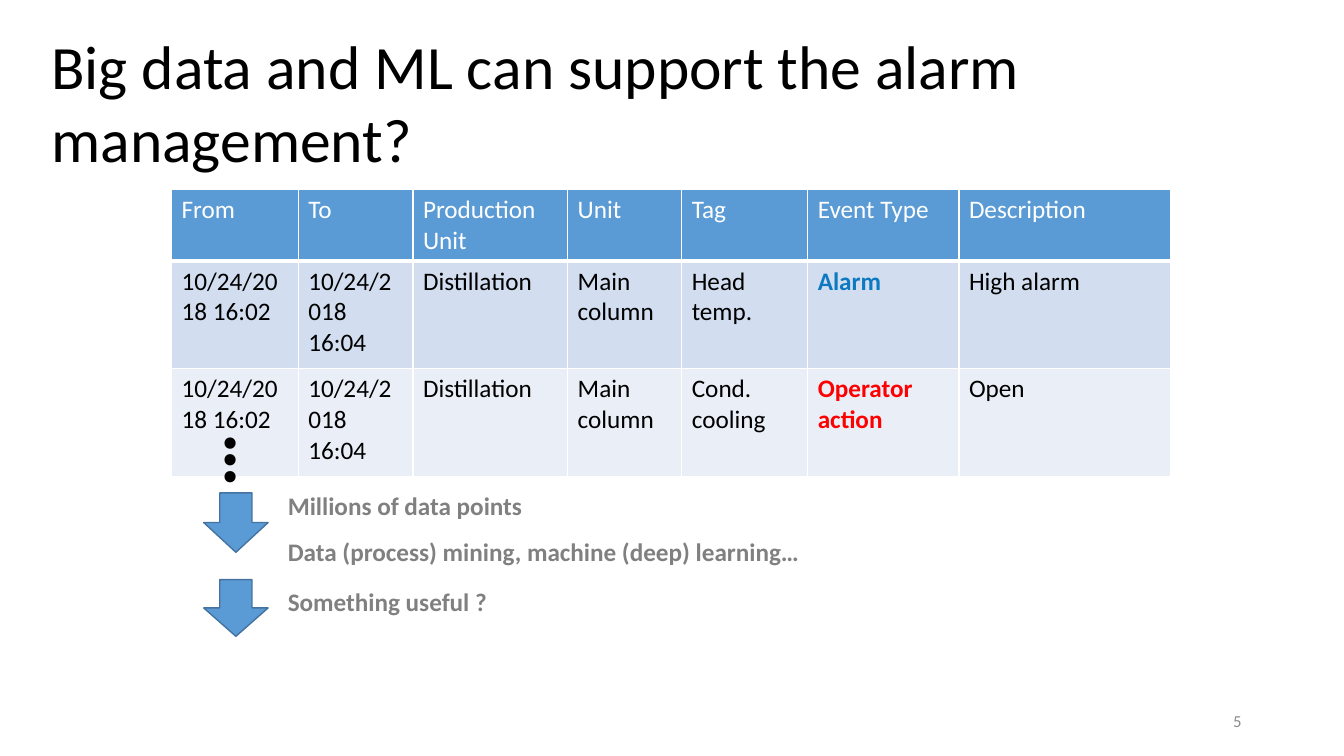
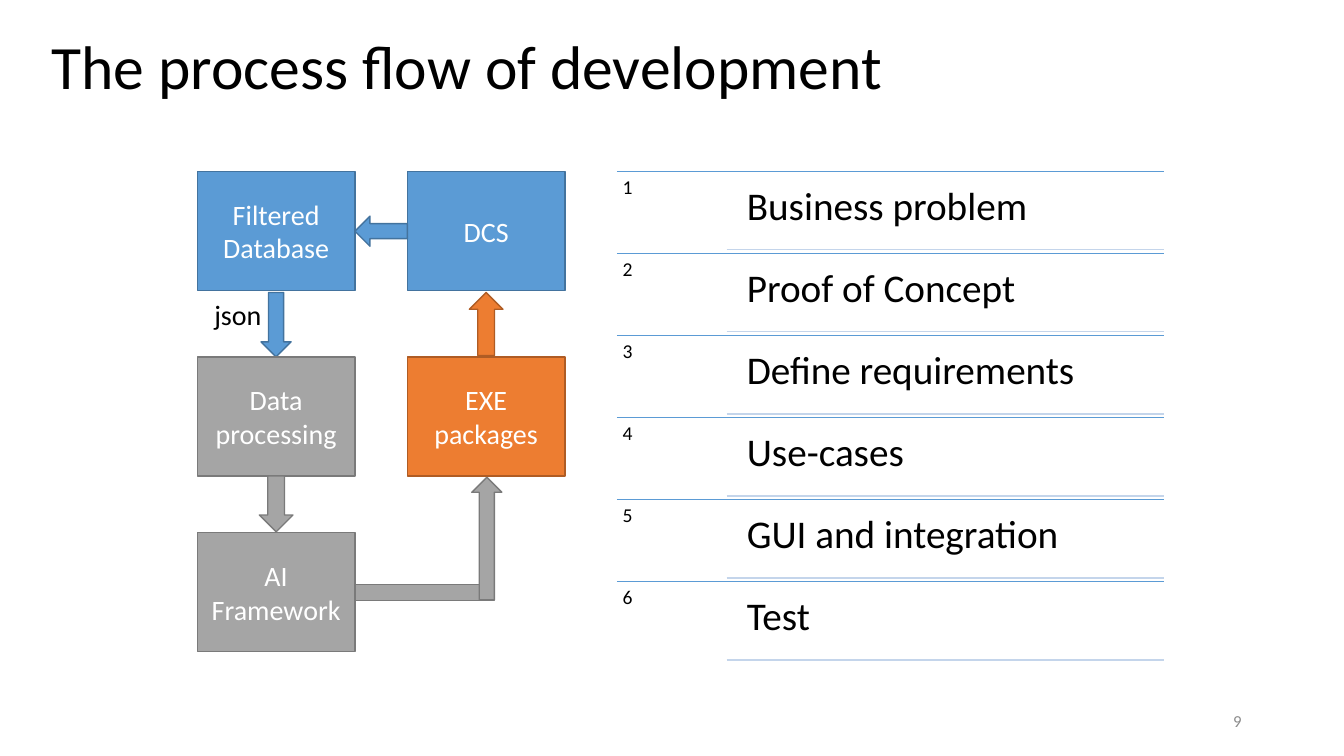
from pptx import Presentation
from pptx.dml.color import RGBColor
from pptx.enum.shapes import MSO_CONNECTOR, MSO_SHAPE
from pptx.enum.text import MSO_ANCHOR, MSO_AUTO_SIZE, PP_ALIGN
from pptx.oxml.ns import qn
from pptx.util import Pt
from lxml import etree

FONT = "Calibri"
BLACK = RGBColor(0x00, 0x00, 0x00)
WHITE = RGBColor(0xFF, 0xFF, 0xFF)
BLUE = RGBColor(0x5B, 0x9B, 0xD5)
BLUE_EDGE = RGBColor(0x43, 0x73, 0x9E)
GRAY = RGBColor(0xA5, 0xA5, 0xA5)
GRAY_EDGE = RGBColor(0x7A, 0x7A, 0x7A)
ORANGE = RGBColor(0xED, 0x7D, 0x31)
ORANGE_EDGE = RGBColor(0xAF, 0x5C, 0x24)
PALE_LINE = RGBColor(0xC4, 0xD5, 0xEB)
BAND_DARK = RGBColor(0xD2, 0xDE, 0xEF)
BAND_LIGHT = RGBColor(0xEA, 0xEF, 0xF7)
ALARM_BLUE = RGBColor(0x0D, 0x79, 0xC0)
ACTION_RED = RGBColor(0xFF, 0x00, 0x00)
NOTE_GRAY = RGBColor(0x80, 0x80, 0x80)
NUMBER_GRAY = RGBColor(0x8C, 0x8C, 0x8C)

BLUE_STYLE = (BLUE, BLUE_EDGE)
GRAY_STYLE = (GRAY, GRAY_EDGE)
ORANGE_STYLE = (ORANGE, ORANGE_EDGE)

RECT = MSO_SHAPE.RECTANGLE
DOWN = MSO_SHAPE.DOWN_ARROW
UP = MSO_SHAPE.UP_ARROW
LEFT = MSO_SHAPE.LEFT_ARROW
STRAIGHT = MSO_CONNECTOR.STRAIGHT
TOP, MIDDLE = MSO_ANCHOR.TOP, MSO_ANCHOR.MIDDLE
ALIGN_LEFT, ALIGN_CENTER, ALIGN_RIGHT = PP_ALIGN.LEFT, PP_ALIGN.CENTER, PP_ALIGN.RIGHT
NO_AUTOFIT = MSO_AUTO_SIZE.NONE
TITLE_ONLY = 5

EVENT_WIDTHS = (90.5, 82, 110.5, 81.5, 90, 108, 151.5)
EVENTS = (
    ("From", "To", "Production Unit", "Unit", "Tag", "Event Type", "Description"),
    ("10/24/2018 16:02", "10/24/2018 16:04", "Distillation", "Main column",
     "Head temp.", "Alarm", "High alarm"),
    ("10/24/2018 16:02", "10/24/2018 16:04", "Distillation", "Main column",
     "Cond. cooling", "Operator action", "Open"),
)
EVENT_COLORS = {"Alarm": ALARM_BLUE, "Operator action": ACTION_RED}
STEPS = ("Business problem", "Proof of Concept", "Define requirements",
         "Use-cases", "GUI and integration", "Test")


def write(frame, text, size, color, bold=False, align=ALIGN_LEFT):
    frame.text = text
    para = frame.paragraphs[0]
    para.alignment = align
    font = para.font
    font.name, font.size, font.bold = FONT, Pt(size), bold
    font.color.rgb = color
    return para


def add_text(page, left, top, width, height, text, size, color=BLACK,
             bold=False, align=ALIGN_LEFT, anchor=TOP, inset=None):
    box = page.shapes.add_textbox(Pt(left), Pt(top), Pt(width), Pt(height))
    frame = box.text_frame
    frame.word_wrap = True
    frame.vertical_anchor = anchor
    if inset is not None:
        frame.margin_left = frame.margin_right = Pt(inset)
        frame.margin_top = frame.margin_bottom = Pt(inset)
    write(frame, text, size, color, bold, align)
    return box


def add_block(page, kind, left, top, width, height, style):
    block = page.shapes.add_shape(kind, Pt(left), Pt(top), Pt(width), Pt(height))
    fill, edge = style
    block.shadow.inherit = False
    block.fill.solid()
    block.fill.fore_color.rgb = fill
    block.line.color.rgb = edge
    block.line.width = Pt(1)
    return block


def add_rule(page, left, right, y, color):
    rule = page.shapes.add_connector(STRAIGHT, Pt(left), Pt(y), Pt(right), Pt(y))
    rule.line.color.rgb = color
    rule.line.width = Pt(1)
    etree.SubElement(rule._element.spPr, qn("a:effectLst"))


def add_page(deck, title, number):
    """Add a slide with the shared title style and slide number."""
    page = deck.slides.add_slide(deck.slide_layouts[TITLE_ONLY])
    heading = page.shapes.title
    heading.left, heading.top = Pt(29.5), Pt(16)
    heading.width, heading.height = Pt(741), Pt(110)
    frame = heading.text_frame
    frame.auto_size = NO_AUTOFIT
    frame.vertical_anchor = TOP
    write(frame, title, 44, BLACK)
    add_text(page, 678, 500.5, 216, 28.5, number, 12, NUMBER_GRAY,
             align=ALIGN_RIGHT, anchor=MIDDLE)
    return page


def add_borders(cell, bottom):
    props = cell._tc.get_or_add_tcPr()
    for side, width in (("L", 1), ("R", 1), ("T", 1), ("B", bottom)):
        line = etree.SubElement(props, qn(f"a:ln{side}"), w=str(Pt(width)))
        fill = etree.SubElement(line, qn("a:solidFill"))
        etree.SubElement(fill, qn("a:srgbClr"), val=str(WHITE))


def add_event_table(page, left, top):
    frame = page.shapes.add_table(len(EVENTS), len(EVENT_WIDTHS), Pt(left), Pt(top),
                                  Pt(sum(EVENT_WIDTHS)), Pt(205))
    table = frame.table
    for column, width in zip(table.columns, EVENT_WIDTHS):
        column.width = Pt(width)
    for row, height in zip(table.rows, (51, 77, 77)):
        row.height = Pt(height)
    for r, (event, fill) in enumerate(zip(EVENTS, (BLUE, BAND_DARK, BAND_LIGHT))):
        base = BLACK if r else WHITE
        for c, text in enumerate(event):
            cell = table.cell(r, c)
            add_borders(cell, 1 if r else 3)
            cell.fill.solid()
            cell.fill.fore_color.rgb = fill
            write(cell.text_frame, text, 18, EVENT_COLORS.get(text, base),
                  text in EVENT_COLORS)


def add_mining_steps(page, left, top):
    dots = add_text(page, left - 2, top - 47.5, 77, 73, "…", 54, bold=True)
    dots.rotation = 90
    for offset, height in ((0, 42.5), (62, 40.5)):
        add_block(page, DOWN, left, top + offset, 46, height, BLUE_STYLE)
    notes = ((-5.5, "Millions of data points"),
             (27.5, "Data (process) mining, machine (deep) learning…"),
             (63.5, "Something useful ?"))
    for offset, text in notes:
        add_text(page, left + 53, top + offset, 640, 29, text, 18, NOTE_GRAY, True)


def add_process_flow(page, left, top):
    width, height = 112.5, 85
    right = left + 150
    row_2, row_3 = top + 132.5, top + 258
    center_1, center_2 = left + width / 2, right + width / 2

    def stage(x, y, text, style):
        block = add_block(page, RECT, x, y, width, height, style)
        block.text_frame.word_wrap = True
        block.text_frame.vertical_anchor = MIDDLE
        write(block.text_frame, text, 20, WHITE, align=ALIGN_CENTER)

    def arrow(kind, center, y, breadth, length, style):
        add_block(page, kind, center - breadth / 2, y, breadth, length, style)

    stage(right, top, "DCS", BLUE_STYLE)
    add_block(page, LEFT, left + width, top + 32, right - left - width, 21.5, BLUE_STYLE)
    stage(left, top, "Filtered Database", BLUE_STYLE)
    arrow(DOWN, center_1, top + 86.5, 21.5, 46, BLUE_STYLE)
    add_text(page, left + 5, top + 86.5, 50, 31.5, "json", 20)
    stage(left, row_2, "Data processing", GRAY_STYLE)
    stage(left, row_3, "AI\vFramework", GRAY_STYLE)
    arrow(DOWN, center_1, row_2 + height, 24, 40, GRAY_STYLE)
    stage(right, row_2, "EXE\vpackages", ORANGE_STYLE)
    arrow(UP, center_2, top + 86.5, 24, 45, ORANGE_STYLE)
    add_block(page, RECT, left + width, row_3 + 37, 99.5, 11.5, GRAY_STYLE)
    arrow(UP, center_2 + 0.5, row_2 + height + 1, 21.5, 87.5, GRAY_STYLE)


def add_step_list(page, left, top, width):
    pitch, number_width = 58.6, 78.5
    right = left + width
    text_left = left + number_width + 6
    for index, step in enumerate(STEPS):
        y = top + index * pitch
        add_rule(page, left, right, y, BLUE)
        number = add_text(page, left, y, number_width, pitch, str(index + 1), 14, inset=4.2)
        label = add_text(page, text_left, y + 2.6, right - text_left, 53.2, step, 28,
                         inset=8.4)
        for box in (number, label):
            box.text_frame.paragraphs[0].line_spacing = 0.9
        add_rule(page, left + number_width, right, y + 56, PALE_LINE)


def main():
    deck = Presentation()
    deck.slide_width, deck.slide_height = Pt(960), Pt(540)

    page = add_page(deck, "Big data and ML can support the alarm management?", "5")
    add_event_table(page, 122.5, 135.5)
    add_mining_steps(page, 145.5, 352)

    page = add_page(deck, "The process flow of development", "9")
    add_process_flow(page, 141, 122.4)
    add_step_list(page, 440.6, 122.4, 391)

    deck.save("out.pptx")


if __name__ == "__main__":
    main()
